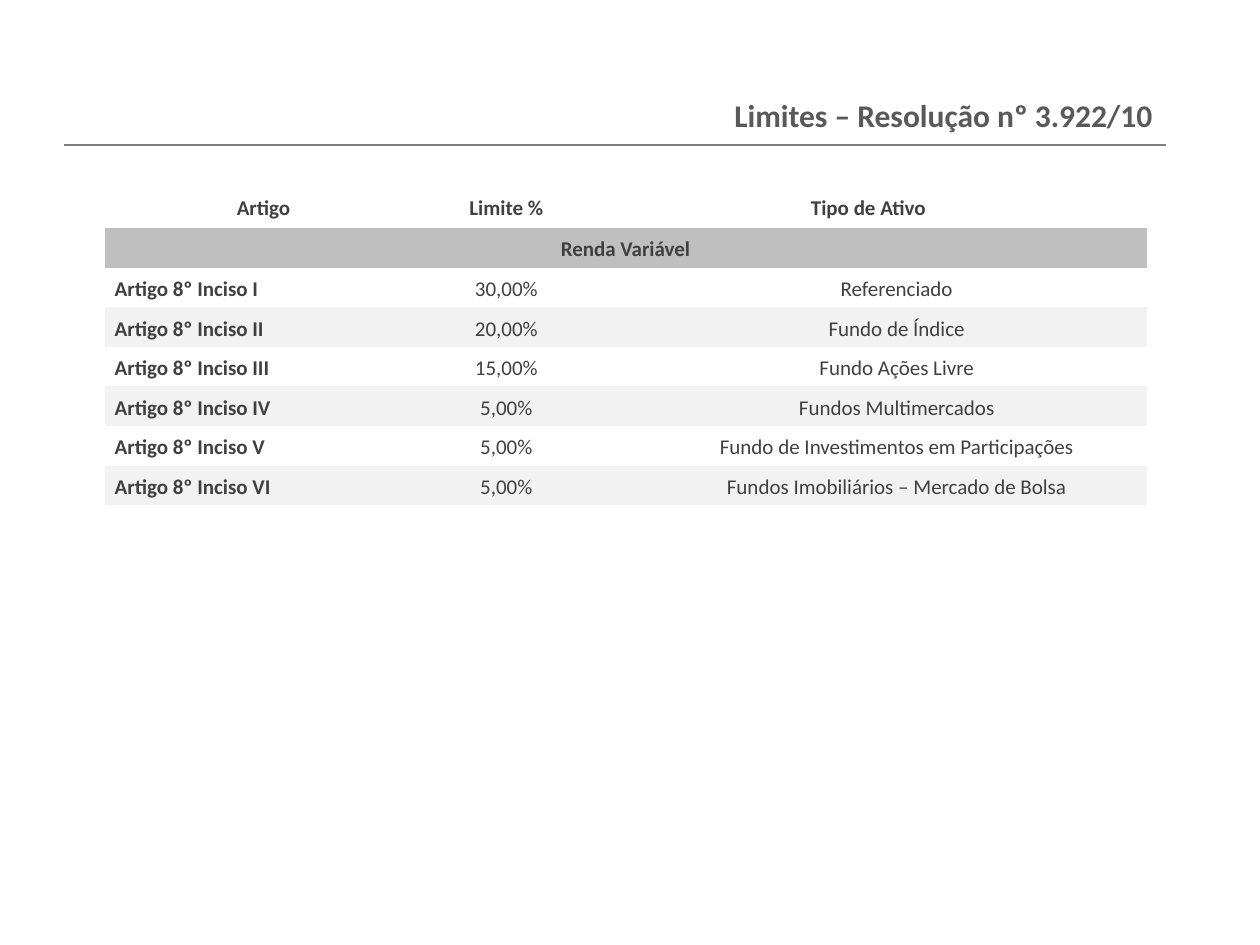
from dataclasses import dataclass

import pptx
import pptx.dml.color
import pptx.enum.shapes
import pptx.enum.text
import pptx.oxml.ns
import pptx.util
from lxml import etree
from pptx.util import Inches

ALIGN = pptx.enum.text.PP_ALIGN
ANCHOR = pptx.enum.text.MSO_ANCHOR
PLAIN_TABLE_STYLE = "{2D5ABB26-0587-4C30-8999-92F81FD0307C}"


def rgb(value):
    return pptx.dml.color.RGBColor.from_string(value)


@dataclass(frozen=True)
class Theme:
    font = "Calibri"
    title_size = pptx.util.Pt(18)
    table_size = pptx.util.Pt(12)
    rule_width = pptx.util.Pt(0.75)
    title = rgb("595959")
    text = rgb("404040")
    rule = rgb("808080")
    section = rgb("BFBFBF")
    band = rgb("F2F2F2")


THEME = Theme()

TITLE = "Limites – Resolução nº 3.922/10"
HEADINGS = ("Artigo", "Limite %", "Tipo de Ativo")
SECTION = "Renda Variável"
LIMITS = (
    ("Artigo 8º Inciso I", "30,00%", "Referenciado"),
    ("Artigo 8º Inciso II", "20,00%", "Fundo de Índice"),
    ("Artigo 8º Inciso III", "15,00%", "Fundo Ações Livre"),
    ("Artigo 8º Inciso IV", "5,00%", "Fundos Multimercados"),
    ("Artigo 8º Inciso V", "5,00%", "Fundo de Investimentos em Participações"),
    ("Artigo 8º Inciso VI", "5,00%", "Fundos Imobiliários – Mercado de Bolsa"),
)


def style_paragraph(para, size, color, bold, align):
    para.alignment = align
    para.font.name = THEME.font
    para.font.size = size
    para.font.color.rgb = color
    para.font.bold = bold


def add_rule(page, left, top, width):
    rule = page.shapes.add_connector(
        pptx.enum.shapes.MSO_CONNECTOR.STRAIGHT, left, top, left + width, top)
    rule.line.color.rgb = THEME.rule
    rule.line.width = THEME.rule_width
    etree.SubElement(rule._element.spPr, pptx.oxml.ns.qn("a:effectLst"))


def place_title(page, left, top, width, height):
    box = page.shapes.title
    box.left, box.top, box.width, box.height = left, top, width, height
    frame = box.text_frame
    frame.text = TITLE
    frame.word_wrap = True
    frame.auto_size = pptx.enum.text.MSO_AUTO_SIZE.NONE
    frame.vertical_anchor = ANCHOR.TOP
    style_paragraph(frame.paragraphs[0], THEME.title_size, THEME.title,
                    True, ALIGN.RIGHT)


def fill_cell(cell, text, bold=True, align=ALIGN.CENTER, fill=None):
    cell.text = text
    cell.vertical_anchor = ANCHOR.MIDDLE
    cell.margin_left = cell.margin_right = Inches(0.08)
    cell.margin_top = cell.margin_bottom = 0
    para = cell.text_frame.paragraphs[0]
    para.line_spacing = 1.15
    style_paragraph(para, THEME.table_size, THEME.text, bold, align)
    if fill is None:
        cell.fill.background()
    else:
        cell.fill.solid()
        cell.fill.fore_color.rgb = fill


def add_limits_table(page, left, top, width, height):
    row_count = len(LIMITS) + 2
    table = page.shapes.add_table(row_count, 4, left, top, width, height).table
    table.first_row = table.horz_banding = False
    table._tbl.tblPr.find(
        pptx.oxml.ns.qn("a:tableStyleId")).text = PLAIN_TABLE_STYLE

    shares = (2.52, 1.33, 0.45, 3.96)
    for column, share in zip(table.columns, shares):
        column.width = int(width * share / sum(shares))
    header_height = Inches(0.34)
    for index, row in enumerate(table.rows):
        row.height = (header_height if index == 0
                      else (height - header_height) // (row_count - 1))

    table.cell(0, 2).merge(table.cell(0, 3))
    for column, heading in enumerate(HEADINGS):
        fill_cell(table.cell(0, column), heading)

    table.cell(1, 0).merge(table.cell(1, 3))
    fill_cell(table.cell(1, 0), SECTION, fill=THEME.section)

    for index, (article, limit, asset) in enumerate(LIMITS):
        fill = THEME.band if index % 2 else None
        for column, text in enumerate((article, limit, "", asset)):
            is_article = column == 0
            fill_cell(table.cell(index + 2, column), text, bold=is_article,
                      align=ALIGN.LEFT if is_article else ALIGN.CENTER,
                      fill=fill)


def main():
    deck = pptx.Presentation()
    deck.slide_width, deck.slide_height = Inches(10), Inches(7.5)
    page = deck.slides.add_slide(deck.slide_layouts.get_by_name("Title Only"))
    add_rule(page, Inches(0.51), Inches(1.15), Inches(8.74))
    add_limits_table(page, Inches(0.83), Inches(1.47), Inches(8.27), Inches(2.54))
    place_title(page, Inches(4.29), Inches(0.71), Inches(4.96), Inches(0.67))
    deck.save("out.pptx")


if __name__ == "__main__":
    main()
